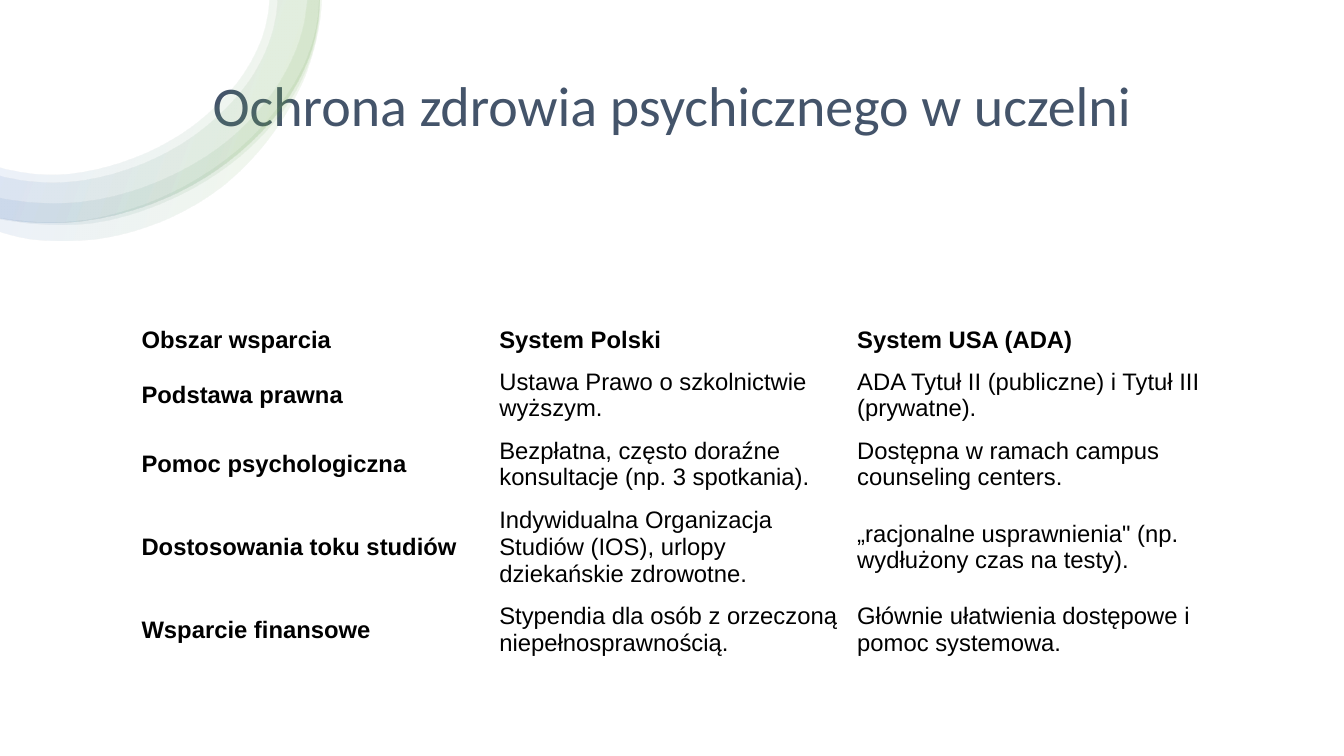
"""Build a slide with a title, a ring ornament and a table of student support."""
from lxml import etree
from pptx import Presentation
from pptx.dml.color import RGBColor
from pptx.enum.shapes import MSO_SHAPE
from pptx.enum.text import MSO_ANCHOR, PP_ALIGN
from pptx.oxml.ns import nsdecls, qn
from pptx.util import Pt

CENTER, MIDDLE, RECT = PP_ALIGN.CENTER, MSO_ANCHOR.MIDDLE, MSO_SHAPE.RECTANGLE

WIDE, HIGH = 960, 540
TITLE = "Ochrona zdrowia psychicznego w uczelni"
ROWS = [
    ("Obszar wsparcia", "System Polski", "System USA (ADA)"),
    ("Podstawa prawna", "Ustawa Prawo o szkolnictwie wyższym.",
     "ADA Tytuł II (publiczne) i Tytuł III (prywatne)."),
    ("Pomoc psychologiczna",
     "Bezpłatna, często doraźne konsultacje (np. 3 spotkania).",
     "Dostępna w ramach campus counseling centers."),
    ("Dostosowania toku studiów",
     "Indywidualna Organizacja Studiów (IOS), urlopy dziekańskie zdrowotne.",
     "„racjonalne usprawnienia\" (np. wydłużony czas na testy)."),
    ("Wsparcie finansowe",
     "Stypendia dla osób z orzeczoną niepełnosprawnością.",
     "Głównie ułatwienia dostępowe i pomoc systemowa."),
]
WIDTHS = (255.6, 255.6, 259.9)
HEIGHTS = (29.5, 49.3, 49.3, 69.1, 49.3)

BROAD = [(228.2, 0), (222, 37), (205.6, 70.4), (161.1, 116.8),
         (101.7, 147.8), (35.3, 159.1), (0, 155.5)]
RINGS = [
    (BROAD, [(192.2, 0), (187.3, 26.2), (179.3, 43.9), (144, 85),
             (92.9, 113.8), (35.3, 124.6), (0, 119.5)]),
    (BROAD, [(198, 0), (193, 27.6), (185, 46.1), (148.3, 89.3),
             (95, 119.5), (35.3, 130.3), (0, 125.3)]),
    ([(228.2, 0), (225.4, 27.4), (215.3, 56.9), (177.1, 106.6),
      (151.9, 126), (123.1, 141.8), (60.5, 159.8), (27.4, 159.8), (0, 156.2)],
     [(218.9, 0), (214.6, 25.2), (203.8, 51.1), (187.2, 75.6), (167, 96.5),
      (115.9, 128.2), (87.8, 138.2), (58.3, 144), (28.1, 144.7), (0, 141.1)]),
    ([(229.7, 0), (224.8, 32.3), (217.4, 55.4), (202.3, 84.2),
      (182.2, 110.9), (157.7, 133.9), (128.9, 151.9), (61.9, 171.4),
      (44.6, 172.1), (27.4, 171.4), (0, 165.6)],
     [(227.5, 0), (224.6, 23.8), (216, 48.2), (205.2, 67), (195.8, 79.9),
      (174.2, 103), (149, 122.4), (121, 138.2), (91.4, 149.8), (60.5, 157),
      (28.1, 158.4), (0, 155.5)]),
]
STOPS = [(2, "FFFFFF"), (16, "70AD47"), (85, "4472C4"), (100, "FFFFFF")]
ALPHA, ANGLE = 10, 200


def color(code):
    """Turn a hex string into a colour."""
    return RGBColor.from_string(code)


def write(para, text, size, face, code, bold=False):
    """Add one formatted run to a paragraph."""
    run = para.add_run()
    run.text = text
    font = run.font
    font.size, font.name, font.bold = Pt(size), face, bold
    font.color.rgb = color(code)


def handles(knots):
    """Return the two curve handles of each span between knots."""
    dots = [complex(x, y) for x, y in knots]
    spans = [abs(b - a) for a, b in zip(dots, dots[1:])]
    rates = [(b - a) / s for a, b, s in zip(dots, dots[1:], spans)]
    mids = [(u * t + v * s) / (s + t)
            for u, v, s, t in zip(rates, rates[1:], spans, spans[1:])]
    slopes = [2 * rates[0] - mids[0], *mids, 2 * rates[-1] - mids[-1]]
    return [(a + u * s / 3, b - v * s / 3) for a, b, u, v, s in
            zip(dots, dots[1:], slopes, slopes[1:], spans)]


def bend(shape, pairs):
    """Turn the straight spans of a shape into curves."""
    lines = list(shape.element.iter(qn("a:lnTo")))
    for line, pair in zip(lines, pairs):
        if pair:
            curve = etree.Element(qn("a:cubicBezTo"))
            for dot in pair:
                etree.SubElement(curve, qn("a:pt"), x=str(Pt(dot.real)),
                                 y=str(Pt(dot.imag)))
            curve.append(line[0])
            line.getparent().replace(line, curve)


def shade(shape):
    """Fill a shape with the pale gradient."""
    stops = "".join(
        f'<a:gs pos="{pos * 1000}"><a:srgbClr val="{code}">'
        f'<a:alpha val="{ALPHA * 1000}"/></a:srgbClr></a:gs>'
        for pos, code in STOPS)
    grad = etree.fromstring(
        f'<a:gradFill {nsdecls("a")} rotWithShape="1"><a:gsLst>{stops}</a:gsLst>'
        f'<a:lin ang="{ANGLE * 60000}" scaled="0"/></a:gradFill>')
    shape.fill.background()
    props = shape.element.spPr
    props.replace(props.find(qn("a:noFill")), grad)


def add_back(slide):
    """Lay a white sheet behind the title."""
    sheet = slide.shapes.add_shape(RECT, 0, 0, Pt(WIDE), Pt(HIGH))
    sheet.shadow.inherit = False
    sheet.fill.solid()
    sheet.fill.fore_color.rgb = color("FFFFFF")
    sheet.line.fill.background()
    slide.shapes.title.element.addprevious(sheet.element)


def add_title(slide):
    """Place and format the title."""
    title = slide.shapes.title
    title.left, title.top = Pt(92.9), Pt(25.2)
    title.width, title.height = Pt(774), Pt(104.4)
    frame = title.text_frame
    frame.word_wrap, frame.vertical_anchor = True, MIDDLE
    para = frame.paragraphs[0]
    para.alignment, para.line_spacing = CENTER, 0.9
    write(para, TITLE, 40, "Calibri", "44546A")


def add_rings(slide):
    """Draw the ring ornament in the corner."""
    for outer, inner in RINGS:
        back = inner[::-1]
        spots = [(Pt(x), Pt(y)) for x, y in outer + back]
        pen = slide.shapes.build_freeform(*spots[0])
        pen.add_line_segments(spots[1:], close=True)
        ring = pen.convert_to_shape()
        bend(ring, [*handles(outer), None, *handles(back)])
        ring.shadow.inherit = False
        ring.line.fill.background()
        shade(ring)


def add_grid(slide):
    """Add the comparison table."""
    grid = slide.shapes.add_table(
        len(ROWS), len(WIDTHS), Pt(94.4), Pt(228.2),
        Pt(sum(WIDTHS)), Pt(sum(HEIGHTS))).table
    grid.first_row = grid.horz_banding = False
    for col, width in zip(grid.columns, WIDTHS):
        col.width = Pt(width)
    for r, (texts, height) in enumerate(zip(ROWS, HEIGHTS)):
        grid.rows[r].height = Pt(height)
        for c, text in enumerate(texts):
            cell = grid.cell(r, c)
            cell.fill.background()
            cell.vertical_anchor = MIDDLE
            cell.margin_left = cell.margin_right = Pt(6.7)
            cell.margin_top = cell.margin_bottom = Pt(3.4)
            write(cell.text_frame.paragraphs[0], text, 17, "Arial", "000000",
                  r == 0 or c == 0)


def main():
    """Build and save the slide."""
    deck = Presentation()
    deck.slide_width, deck.slide_height = Pt(WIDE), Pt(HIGH)
    slide = deck.slides.add_slide(deck.slide_layouts[5])
    add_back(slide)
    add_title(slide)
    add_rings(slide)
    add_grid(slide)
    deck.save("out.pptx")


if __name__ == "__main__":
    main()
